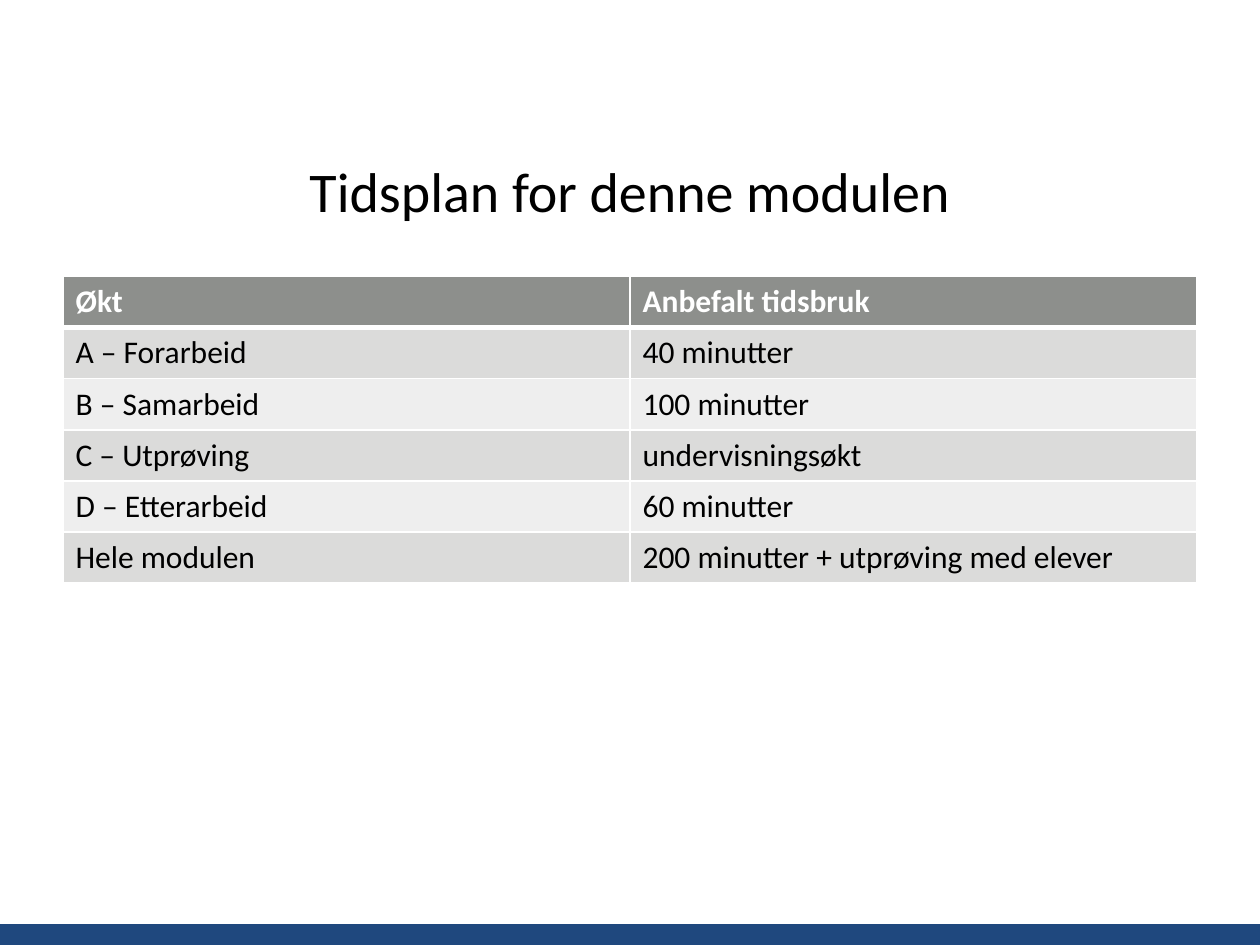
import pptx
import pptx.dml.color
import pptx.enum.shapes
import pptx.enum.text
import pptx.oxml
import pptx.oxml.ns
import pptx.util

Pt = pptx.util.Pt
FONT = "Calibri"
SLIDE_WIDTH, SLIDE_HEIGHT = 720, 540
MARGIN = 36
CONTENT_WIDTH = SLIDE_WIDTH - 2 * MARGIN
ROW_HEIGHT = 29.2
HEADER_FILL = "8D8F8C"
BAND_FILLS = ("DBDBDA", "EEEEEE")

SCHEDULE = [
    ("Økt", "Anbefalt tidsbruk"),
    ("A – Forarbeid", "40 minutter"),
    ("B – Samarbeid", "100 minutter"),
    ("C – Utprøving", "undervisningsøkt"),
    ("D – Etterarbeid", "60 minutter"),
    ("Hele modulen", "200 minutter + utprøving med elever"),
]


def color(hex_value):
    return pptx.dml.color.RGBColor.from_string(hex_value)


def style_font(paragraph, size, hex_value, bold=False):
    paragraph.font.name = FONT
    paragraph.font.size = Pt(size)
    paragraph.font.bold = bold
    paragraph.font.color.rgb = color(hex_value)


def add_footer_bar(slide):
    height = 12
    bar = slide.shapes.add_shape(
        pptx.enum.shapes.MSO_SHAPE.RECTANGLE,
        Pt(0), Pt(SLIDE_HEIGHT - height), Pt(SLIDE_WIDTH), Pt(height))
    bar.shadow.inherit = False
    bar.fill.solid()
    bar.fill.fore_color.rgb = color("1F487E")
    bar.line.fill.background()


def set_title(slide, wording):
    title = slide.shapes.title
    title.left, title.top = Pt(MARGIN), Pt(72)
    title.width, title.height = Pt(CONTENT_WIDTH), Pt(72.7)
    title.text_frame.text = wording
    title.text_frame.vertical_anchor = pptx.enum.text.MSO_ANCHOR.MIDDLE
    heading = title.text_frame.paragraphs[0]
    heading.alignment = pptx.enum.text.PP_ALIGN.CENTER
    style_font(heading, 32, "000000")


def add_cell_borders(cell, widths):
    """Draw white borders; widths maps each side (L, R, T, B) to points."""
    properties = cell._tc.get_or_add_tcPr()
    for side, width in widths.items():
        properties.append(pptx.oxml.parse_xml(
            f'<a:ln{side} {pptx.oxml.ns.nsdecls("a")} w="{Pt(width)}">'
            '<a:solidFill><a:srgbClr val="FFFFFF"/></a:solidFill>'
            f'</a:ln{side}>'))


def fill_cell(cell, wording, row_index):
    is_header = row_index == 0
    # The rule below the header is shared by the first two rows
    add_cell_borders(cell, {"L": 1, "R": 1,
                            "T": 3 if row_index == 1 else 1,
                            "B": 3 if is_header else 1})
    cell.fill.solid()
    cell.fill.fore_color.rgb = color(
        HEADER_FILL if is_header else BAND_FILLS[(row_index - 1) % 2])
    cell.text = wording
    style_font(cell.text_frame.paragraphs[0], 18,
               "FFFFFF" if is_header else "000000", is_header)


def add_schedule(slide, rows):
    schedule = slide.shapes.add_table(
        len(rows), len(rows[0]), Pt(MARGIN), Pt(158),
        Pt(CONTENT_WIDTH), Pt(ROW_HEIGHT * len(rows))).table
    for row_index, entries in enumerate(rows):
        schedule.rows[row_index].height = Pt(ROW_HEIGHT)
        for column_index, wording in enumerate(entries):
            fill_cell(schedule.cell(row_index, column_index), wording, row_index)


def main():
    deck = pptx.Presentation()
    deck.slide_width, deck.slide_height = Pt(SLIDE_WIDTH), Pt(SLIDE_HEIGHT)
    title_only = deck.slide_layouts[5]
    slide = deck.slides.add_slide(title_only)

    # Footer band, heading and timetable
    add_footer_bar(slide)
    set_title(slide, "Tidsplan for denne modulen")
    add_schedule(slide, SCHEDULE)
    deck.save("out.pptx")


if __name__ == "__main__":
    main()
